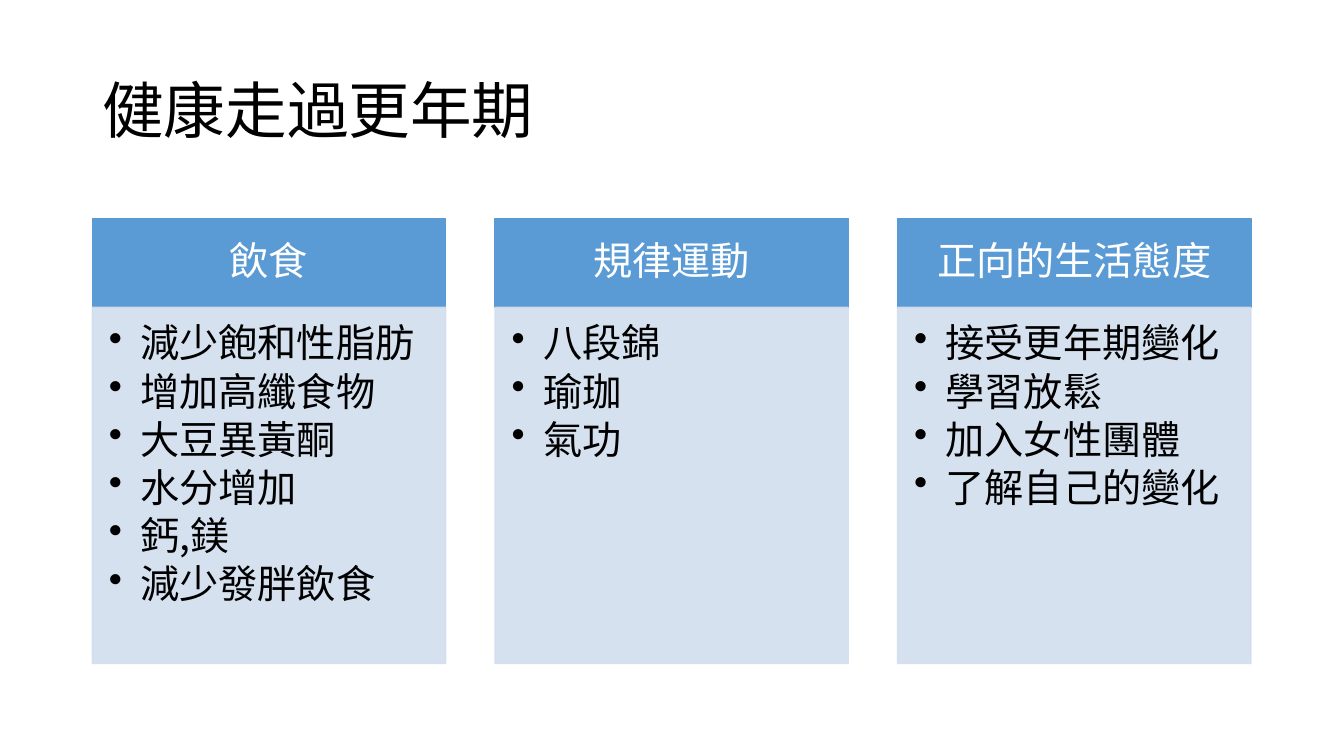
from lxml.etree import SubElement
from pptx import Presentation
from pptx.dml.color import RGBColor
from pptx.enum.shapes import MSO_SHAPE
from pptx.enum.text import MSO_ANCHOR, PP_ALIGN
from pptx.oxml.ns import qn
from pptx.util import Pt

COLOURS = {"header": "5B9BD5", "body": "D2DEEF", "white": "FFFFFF", "black": "000000"}
COLUMNS = [
    ("飲食", ["減少飽和性脂肪", "增加高纖食物", "大豆異黃酮", "水分增加", "鈣,鎂", "減少發胖飲食"]),
    ("規律運動", ["八段錦", "瑜珈", "氣功"]),
    ("正向的生活態度", ["接受更年期變化", "學習放鬆", "加入女性團體", "了解自己的變化"]),
]
LEFT, COLUMN_WIDTH, COLUMN_STEP = 66, 252.3, 287.6
HEADER_TOP, HEADER_HEIGHT, BODY_HEIGHT = 156.2, 63.4, 254.3


class HealthPage:
    """Holds the style and the current slide, and draws its elements."""

    font = "Noto Sans CJK SC"

    def __init__(self, deck):
        self.page = deck.slides.add_slide(deck.slide_layouts[6])

    def panel(self, left, top, width, height, colour, alpha=100):
        shape = self.page.shapes.add_shape(
            MSO_SHAPE.RECTANGLE, Pt(left), Pt(top), Pt(width), Pt(height))
        shape.shadow.inherit = False
        shape.line.width = Pt(1)
        for fill in (shape.fill, shape.line.fill):
            fill.solid()
            fill.fore_color.rgb = RGBColor.from_string(COLOURS[colour])
        if alpha < 100:
            for tint in shape._element.spPr.iter(qn("a:srgbClr")):
                SubElement(tint, qn("a:alpha"), val=str(alpha * 1000))
        return shape

    def frame(self, box, insets, anchor):
        frame = box.text_frame
        frame.word_wrap = True
        frame.vertical_anchor = anchor
        frame.margin_left, frame.margin_top, frame.margin_right, frame.margin_bottom = map(Pt, insets)
        return frame

    def text(self, frame, lines, size, colour, align=PP_ALIGN.LEFT, after=0, bullet=False):
        for index, line in enumerate(lines):
            para = frame.add_paragraph() if index else frame.paragraphs[0]
            para.alignment = align
            para.line_spacing = 0.9
            properties = para._p.get_or_add_pPr()
            if after:
                spacing = SubElement(properties, qn("a:spcAft"))
                SubElement(spacing, qn("a:spcPct"), val=str(after * 1000))
            if bullet:
                properties.set("marL", str(Pt(22.5)))
                properties.set("indent", str(Pt(-22.5)))
                SubElement(properties, qn("a:buChar"), char="•")
            span = para.add_run()
            span.text = line
            span.font.size = Pt(size)
            span.font.name = self.font
            span.font.color.rgb = RGBColor.from_string(COLOURS[colour])
            SubElement(span._r.get_or_add_rPr(), qn("a:ea"), typeface=self.font)

    def title(self, words):
        box = self.page.shapes.add_textbox(Pt(LEFT), Pt(28.75), Pt(828), Pt(104.4))
        frame = self.frame(box, (7.2, 3.6, 7.2, 3.6), MSO_ANCHOR.MIDDLE)
        self.text(frame, [words], 44, "black")

    def column(self, left, heading, items):
        header = self.panel(left, HEADER_TOP, COLUMN_WIDTH, HEADER_HEIGHT, "header")
        frame = self.frame(header, (15.7, 9, 15.7, 9), MSO_ANCHOR.MIDDLE)
        self.text(frame, [heading], 28, "white", PP_ALIGN.CENTER, after=35)
        body = self.panel(left, HEADER_TOP + HEADER_HEIGHT, COLUMN_WIDTH, BODY_HEIGHT, "body", alpha=90)
        frame = self.frame(body, (11.8, 11.8, 15.7, 17.6), MSO_ANCHOR.TOP)
        self.text(frame, items, 28, "black", after=15, bullet=True)


def main():
    deck = Presentation()
    deck.slide_width, deck.slide_height = Pt(960), Pt(540)
    page = HealthPage(deck)
    page.title("健康走過更年期")
    for index, (heading, items) in enumerate(COLUMNS):
        page.column(LEFT + index * COLUMN_STEP, heading, items)
    deck.save("out.pptx")


if __name__ == "__main__":
    main()
